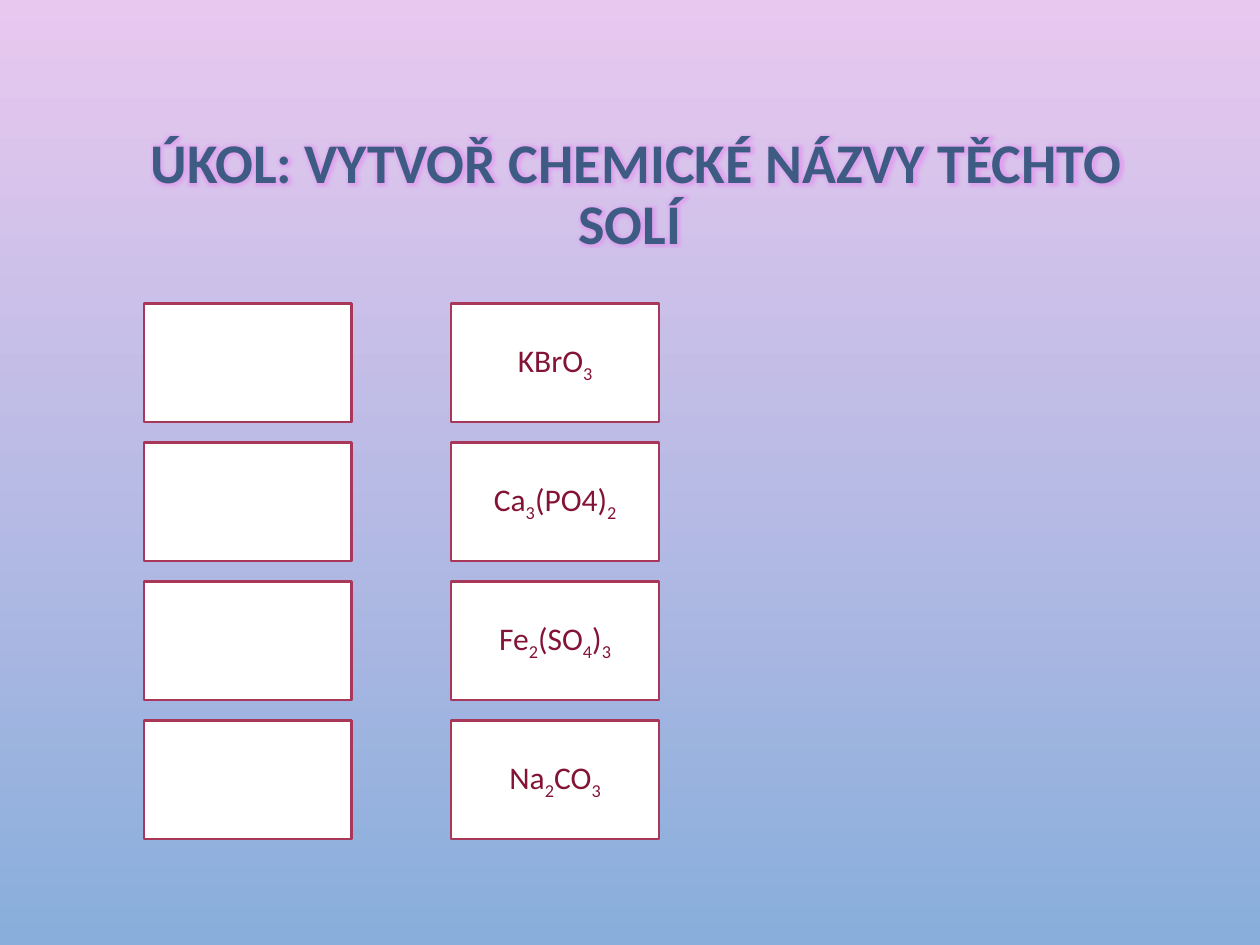
from lxml import etree
from pptx import Presentation
from pptx.dml.color import RGBColor
from pptx.enum.shapes import MSO_SHAPE
from pptx.enum.text import MSO_ANCHOR, MSO_AUTO_SIZE, PP_ALIGN
from pptx.oxml.ns import qn
from pptx.util import Pt

RECTANGLE = MSO_SHAPE.RECTANGLE
MIDDLE = MSO_ANCHOR.MIDDLE
CENTER = PP_ALIGN.CENTER
NO_AUTOFIT = MSO_AUTO_SIZE.NONE

# Every second part of a formula is a subscript.
FORMULAS = ["KBrO|3", "Ca|3|(PO4)|2", "Fe|2|(SO|4|)|3", "Na|2|CO|3"]
ANSWER_LEFT, FORMULA_LEFT = 82.1, 257.8
FIRST_TOP, ROW_STEP = 173.5, 79.4
BOX_WIDTH, BOX_HEIGHT = 118.8, 67.7


def rgb(color):
    return RGBColor.from_string(color)


def add_text(para, text, size=18, color="831436", bold=False, baseline=0):
    span = para.add_run()
    span.text = text
    span.font.name = "Calibri"
    span.font.size = Pt(size)
    span.font.bold = bold
    span.font.color.rgb = rgb(color)
    if baseline:
        span._r.get_or_add_rPr().set("baseline", str(baseline * 1000))
    return span


def add_glow(span, color, radius):
    effects = etree.Element(qn("a:effectLst"))
    glow = etree.SubElement(effects, qn("a:glow"), rad=str(Pt(radius)))
    tint = etree.SubElement(glow, qn("a:srgbClr"), val=color)
    etree.SubElement(tint, qn("a:alpha"), val="60000")
    span._r.get_or_add_rPr().find(qn("a:solidFill")).addnext(effects)


class SlideBuilder:
    """Draws the elements of one slide in a shared style."""

    fill = "FFFFFF"
    line = "A8375A"
    title_color = "3E5C83"
    glow = "E38CF0"

    def __init__(self, page):
        self.page = page

    def background(self, top, bottom):
        fill = self.page.background.fill
        fill.gradient()
        fill.gradient_angle = 270
        for stop, color in zip(fill.gradient_stops, (top, bottom)):
            stop.color.rgb = rgb(color)

    def title(self, text, left, top, width, height):
        box = self.page.shapes.title
        box.left, box.top = Pt(left), Pt(top)
        box.width, box.height = Pt(width), Pt(height)
        frame = box.text_frame
        frame.word_wrap = True
        frame.auto_size = NO_AUTOFIT
        frame.vertical_anchor = MIDDLE
        para = frame.paragraphs[0]
        para.alignment = CENTER
        para.line_spacing = 0.9
        span = add_text(para, text, size=32, color=self.title_color, bold=True)
        add_glow(span, self.glow, 4)

    def card(self, left, top, formula=""):
        box = self.page.shapes.add_shape(
            RECTANGLE, Pt(left), Pt(top), Pt(BOX_WIDTH), Pt(BOX_HEIGHT))
        box.shadow.inherit = False
        box.fill.solid()
        box.fill.fore_color.rgb = rgb(self.fill)
        box.line.color.rgb = rgb(self.line)
        box.line.width = Pt(1.25)
        if formula:
            box.text_frame.word_wrap = True
            box.text_frame.vertical_anchor = MIDDLE
            para = box.text_frame.paragraphs[0]
            para.alignment = CENTER
            for index, part in enumerate(formula.split("|")):
                add_text(para, part, baseline=-25 if index % 2 else 0)


def main():
    deck = Presentation()
    deck.slide_width, deck.slide_height = Pt(720), Pt(540)
    builder = SlideBuilder(deck.slides.add_slide(deck.slide_layouts[5]))
    builder.background("E9C8EF", "89AEDB")
    builder.title(" ÚKOL: VYTVOŘ CHEMICKÉ NÁZVY TĚCHTO SOLÍ", 54, 49, 612, 126)
    tops = [FIRST_TOP + row * ROW_STEP for row in range(len(FORMULAS))]
    for top in tops:
        builder.card(ANSWER_LEFT, top)
    for top, formula in zip(tops, FORMULAS):
        builder.card(FORMULA_LEFT, top, formula)
    deck.save("out.pptx")


if __name__ == "__main__":
    main()
